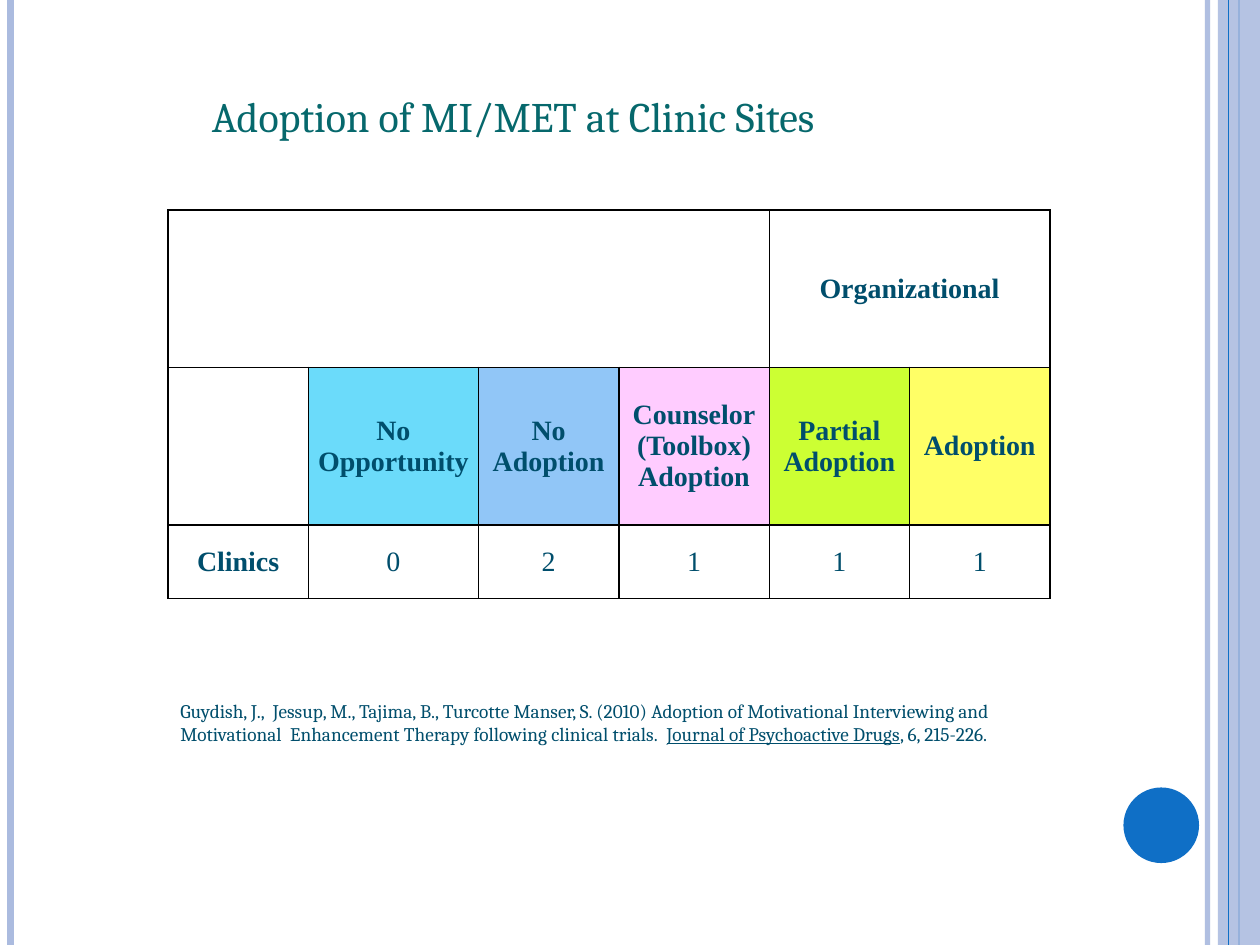
from lxml.etree import SubElement as Sub
from pptx import Presentation
from pptx.dml.color import RGBColor as RGB
from pptx.enum.shapes import MSO_CONNECTOR as Conn, MSO_SHAPE as Form
from pptx.enum.text import MSO_ANCHOR as Anchor, MSO_AUTO_SIZE as Auto, PP_ALIGN as Align
from pptx.oxml.ns import qn
from pptx.util import Pt

WHITE = RGB(0xFF, 0xFF, 0xFF)
BLACK = RGB(0x00, 0x00, 0x00)
PALE = RGB(0xAB, 0xBB, 0xDF)
BLUE = RGB(0x0F, 0x6F, 0xC6)
TEAL = RGB(0x06, 0x68, 0x6C)
NAVY = RGB(0x00, 0x4E, 0x6C)
CYAN = RGB(0x6B, 0xDB, 0xFA)
SKY = RGB(0x91, 0xC6, 0xF7)
PINK = RGB(0xFF, 0xCC, 0xFF)
LIME = RGB(0xCC, 0xFF, 0x33)
YELLOW = RGB(0xFF, 0xFF, 0x66)

WIDE, HIGH = 720, 540


class Page:
    serif = "Cambria"
    grid = "Times New Roman"

    def __init__(self, deck):
        self.slide = deck.slides.add_slide(deck.slide_layouts[6])
        self.shapes = self.slide.shapes

    def fade(self, fill, alpha):
        color = fill._xPr.find(qn("a:solidFill"))[0]
        Sub(color, qn("a:alpha"), val=str(alpha * 1000))

    def rule(self, x, width, color, alpha=100):
        line = self.shapes.add_connector(Conn.STRAIGHT, Pt(x), 0, Pt(x), Pt(HIGH))
        line.line.width = Pt(width)
        line.line.color.rgb = color
        if alpha < 100:
            self.fade(line.line.fill, alpha)
        Sub(line._element.spPr, qn("a:effectLst"))

    def shape(self, form, x, y, w, h, color, alpha=100):
        item = self.shapes.add_shape(form, Pt(x), Pt(y), Pt(w), Pt(h))
        item.shadow.inherit = False
        item.line.fill.background()
        item.fill.solid()
        item.fill.fore_color.rgb = color
        if alpha < 100:
            self.fade(item.fill, alpha)

    def style(self, para, name, size, color, bold=False):
        font = para.font
        font.name, font.size, font.bold = name, Pt(size), bold
        font.color.rgb = color

    def text(self, x, y, w, h, parts, size, color):
        """Each part is a pair: wording, underlined or not."""
        frame = self.shapes.add_textbox(Pt(x), Pt(y), Pt(w), Pt(h)).text_frame
        frame.word_wrap = True
        frame.auto_size = Auto.SHAPE_TO_FIT_TEXT
        para = frame.paragraphs[0]
        self.style(para, self.serif, size, color)
        for words, under in parts:
            run = para.add_run()
            run.text = words
            if under:
                run.font.underline = True

    def table(self, x, y, cols, rows):
        frame = self.shapes.add_table(len(rows), len(cols), Pt(x), Pt(y),
                                      Pt(sum(cols)), Pt(sum(rows)))
        table = frame.table
        table.first_row = table.horz_banding = False
        for col, width in zip(table.columns, cols):
            col.width = Pt(width)
        for row, height in zip(table.rows, rows):
            row.height = Pt(height)
        for cell in table.iter_cells():
            self.border(cell)
            cell.fill.background()
        return table

    def border(self, cell):
        props = cell._tc.get_or_add_tcPr()
        for side in "LRTB":
            line = Sub(props, qn(f"a:ln{side}"), w=str(Pt(1)))
            fill = Sub(line, qn("a:solidFill"))
            Sub(fill, qn("a:srgbClr"), val=str(BLACK))

    def cell(self, cell, words, color=None, bold=True):
        cell.text = words
        cell.vertical_anchor = Anchor.MIDDLE
        cell.margin_left = cell.margin_right = Pt(5)
        cell.margin_top = cell.margin_bottom = 0
        if color is not None:
            cell.fill.solid()
            cell.fill.fore_color.rgb = color
        for para in cell.text_frame.paragraphs:
            para.alignment = Align.CENTER
            self.style(para, self.grid, 16, NAVY, bold)


def main():
    deck = Presentation()
    deck.slide_width, deck.slide_height = Pt(WIDE), Pt(HIGH)
    page = Page(deck)

    # Side bands and dot
    page.rule(690, 3, PALE, 93)
    page.rule(6, 4.5, PALE)
    page.rule(708, 1.5, BLUE)
    page.shape(Form.RECTANGLE, 696, 0, 24, HIGH, PALE, 87)
    page.rule(702, 0.75, BLUE)
    page.shape(Form.OVAL, 642, 450, 43.2, 43.2, BLUE)

    # Adoption table
    col = 80.2
    table = page.table(96, 120, [col, 97.2, col, 86, col, col], [90, 90, 42])
    table.cell(0, 0).merge(table.cell(0, 3))
    table.cell(0, 4).merge(table.cell(0, 5))
    page.cell(table.cell(0, 4), "Organizational", WHITE)
    page.cell(table.cell(2, 0), "Clinics")
    levels = [
        ("No\nOpportunity", CYAN, 0),
        ("No Adoption", SKY, 2),
        ("Counselor\n(Toolbox)\nAdoption", PINK, 1),
        ("Partial Adoption", LIME, 1),
        ("Adoption", YELLOW, 1),
    ]
    for i, (name, color, count) in enumerate(levels, 1):
        page.cell(table.cell(1, i), name, color)
        page.cell(table.cell(2, i), str(count), bold=False)

    # Title and citation
    page.text(114, 48, 474, 36, [("Adoption of MI/MET at Clinic Sites", False)], 24, TEAL)
    page.text(96, 396, 510, 47.5, [
        ("Guydish, J.,  Jessup, M., Tajima, B., Turcotte Manser, S. (2010) "
         "Adoption of Motivational Interviewing and Motivational  Enhancement "
         "Therapy following clinical trials.  ", False),
        ("Journal of Psychoactive Drugs", True),
        (", 6, 215-226.", False),
    ], 11, NAVY)

    deck.save("out.pptx")


if __name__ == "__main__":
    main()
